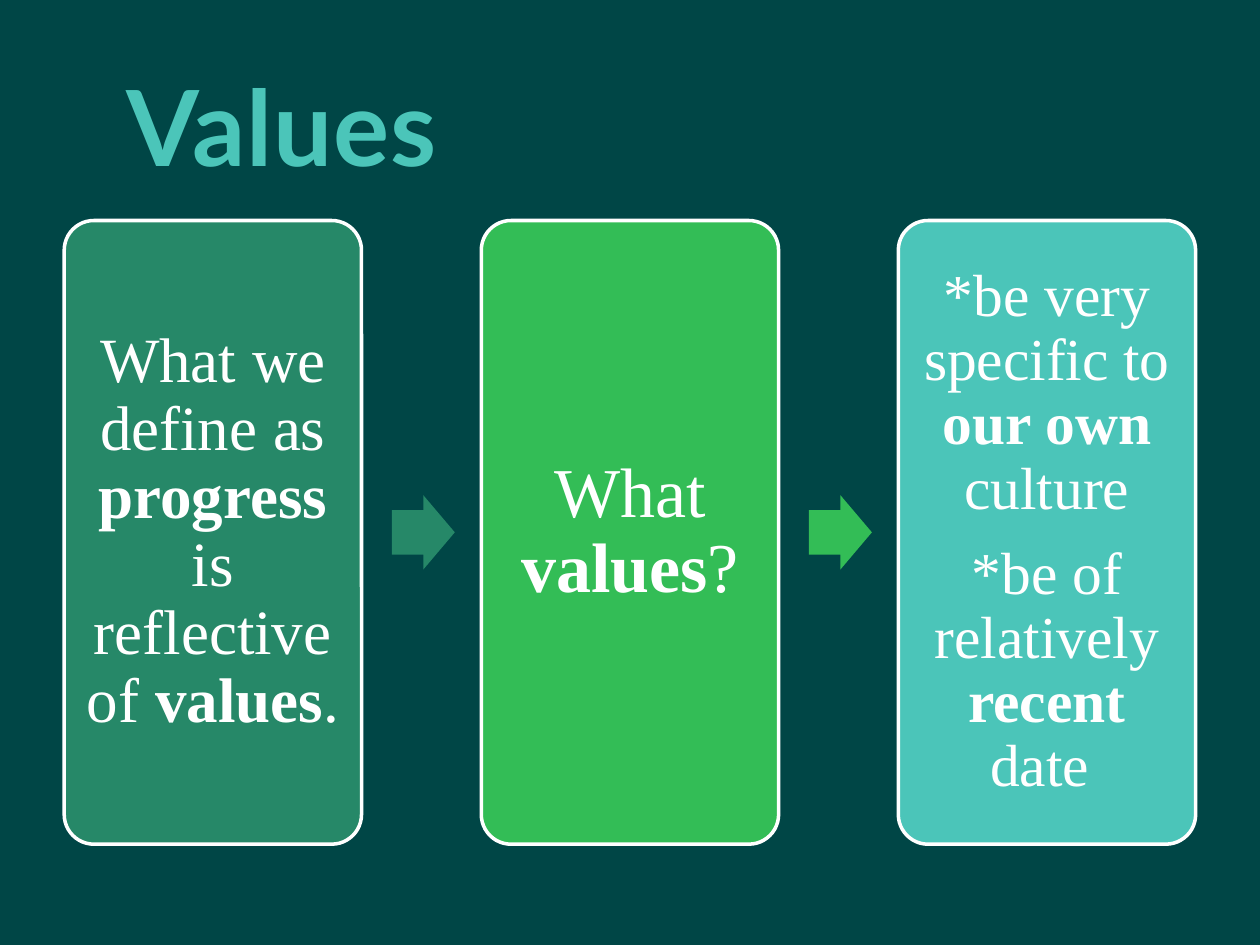
from dataclasses import dataclass

from pptx import Presentation
from pptx import util as u
from pptx.dml.color import RGBColor
from pptx.enum import shapes, text


@dataclass(frozen=True)
class Theme:
    background: str = "004646"
    white: str = "FFFFFF"
    pine: str = "268868"
    green: str = "33BD56"
    aqua: str = "4BC5B9"
    title_font: str = "Lato"
    body_font: str = "Times New Roman"
    title_size: int = 60
    body_sizes: tuple = (36, 40, 34)
    outline: float = 2


THEME = Theme()

CARD_LEFT, CARD_TOP, CARD_WIDTH, CARD_HEIGHT = 0.51, 1.75, 2.36, 4.95
CARD_STEP = 3.31
ARROW_OFFSET, ARROW_WIDTH, ARROW_HEIGHT = 2.6, 0.5, 0.59

# Each card: fill, text inset, paragraphs of (words, bold) spans.
CARDS = [
    (THEME.pine, 0.08, [
        [("What we define as ", False), ("progress", True),
         (" is reflective of ", False), ("values", True), (".", False)],
    ]),
    (THEME.green, 0.1, [
        [("What ", False), ("values", True), ("?", False)],
    ]),
    (THEME.aqua, 0.07, [
        [("*be very specific to ", False), ("our own", True), (" culture", False)],
        [("*be of relatively ", False), ("recent", True), (" date ", False)],
    ]),
]


def add_span(para, words, font, size, color, bold):
    span = para.add_run()
    span.text = words
    span.font.name = font
    span.font.size = u.Pt(size)
    span.font.bold = bold
    span.font.color.rgb = RGBColor.from_string(color)
    return span


def add_title(page, words):
    box = page.shapes.add_textbox(
        u.Inches(0.91), u.Inches(0.36), u.Inches(4.26), u.Inches(1.25))
    frame = box.text_frame
    frame.word_wrap = True
    frame.vertical_anchor = text.MSO_ANCHOR.MIDDLE
    span = add_span(frame.paragraphs[0], words, THEME.title_font,
                    THEME.title_size, THEME.aqua, True)
    span.font._element.set("spc", "50")


def add_filled(page, kind, left, top, width, height, fill, adjustments):
    shape = page.shapes.add_shape(
        kind, u.Inches(left), u.Inches(top), u.Inches(width), u.Inches(height))
    for index, value in enumerate(adjustments):
        shape.adjustments[index] = value
    shape.shadow.inherit = False
    shape.fill.solid()
    shape.fill.fore_color.rgb = RGBColor.from_string(fill)
    return shape


def add_card(page, left, fill, inset, paragraphs, size):
    card = add_filled(page, shapes.MSO_SHAPE.ROUNDED_RECTANGLE, left, CARD_TOP,
                      CARD_WIDTH, CARD_HEIGHT, fill, [0.1])
    card.line.color.rgb = RGBColor.from_string(THEME.white)
    card.line.width = u.Pt(THEME.outline)
    frame = card.text_frame
    frame.word_wrap = True
    frame.vertical_anchor = text.MSO_ANCHOR.MIDDLE
    frame.margin_left = frame.margin_right = u.Inches(inset)
    frame.margin_top = frame.margin_bottom = u.Inches(inset)
    for index, spans in enumerate(paragraphs):
        para = frame.add_paragraph() if index else frame.paragraphs[0]
        para.alignment = text.PP_ALIGN.CENTER
        para.line_spacing = 0.9
        para.space_after = u.Pt(round(size * 0.35))
        for words, bold in spans:
            add_span(para, words, THEME.body_font, size, THEME.white, bold)


def add_arrow(page, left, fill):
    top = CARD_TOP + (CARD_HEIGHT - ARROW_HEIGHT) / 2
    arrow = add_filled(page, shapes.MSO_SHAPE.RIGHT_ARROW, left, top,
                       ARROW_WIDTH, ARROW_HEIGHT, fill, [0.6, 0.5])
    arrow.line.fill.background()


def main():
    deck = Presentation()
    deck.slide_width, deck.slide_height = u.Inches(10), u.Inches(7.5)
    page = deck.slides.add_slide(deck.slide_layouts[6])
    page.background.fill.solid()
    page.background.fill.fore_color.rgb = RGBColor.from_string(THEME.background)

    add_title(page, "Values")
    for index, (fill, inset, paragraphs) in enumerate(CARDS):
        left = CARD_LEFT + index * CARD_STEP
        add_card(page, left, fill, inset, paragraphs, THEME.body_sizes[index])
        if index < len(CARDS) - 1:
            add_arrow(page, left + ARROW_OFFSET, fill)

    deck.save("out.pptx")


if __name__ == "__main__":
    main()
